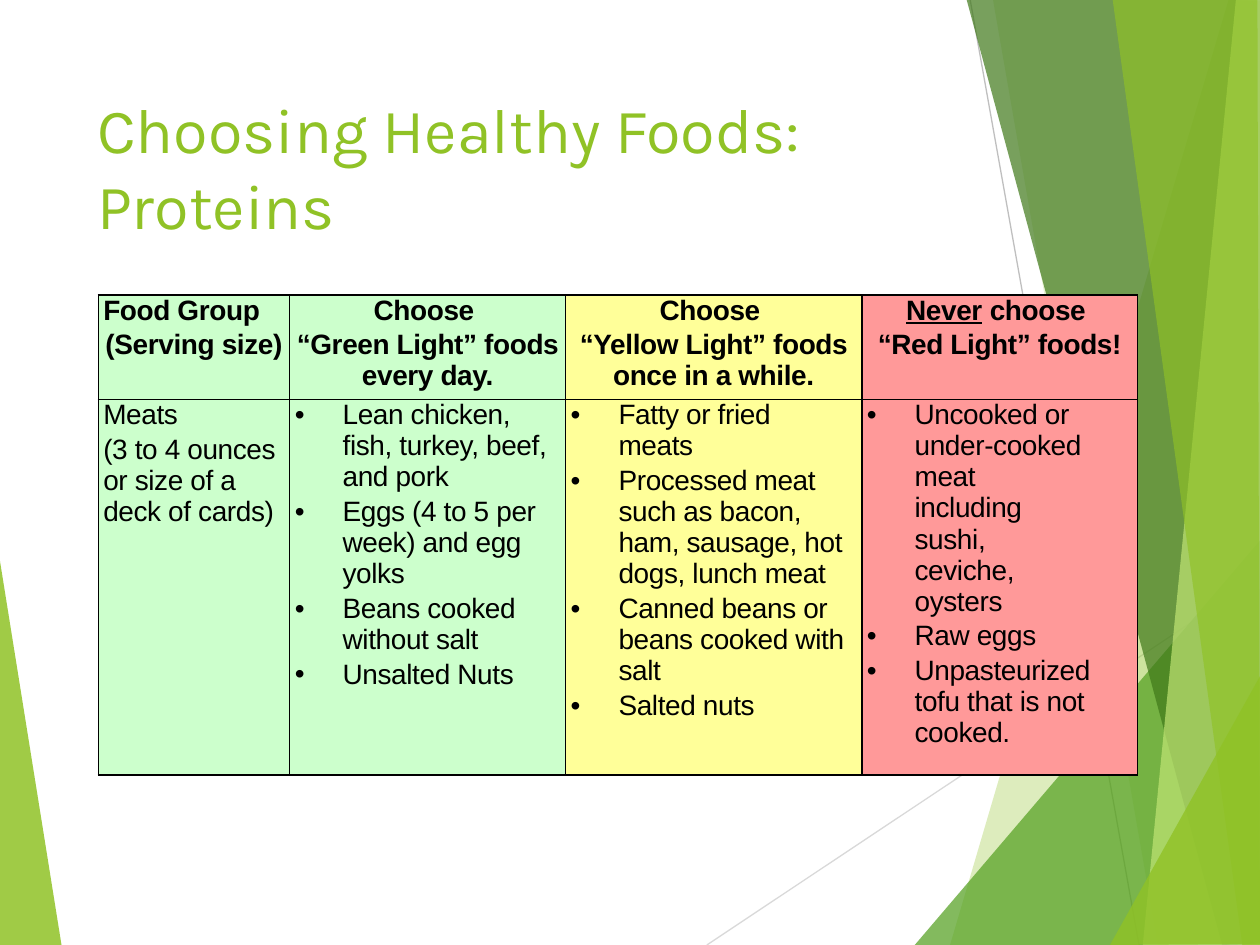
from dataclasses import dataclass

from lxml import etree
from pptx import Presentation
from pptx.dml.color import RGBColor
from pptx.enum.shapes import MSO_CONNECTOR
from pptx.enum.text import MSO_ANCHOR, PP_ALIGN
from pptx.oxml.ns import qn
from pptx.util import Inches, Pt

STRAIGHT = MSO_CONNECTOR.STRAIGHT
TOP = MSO_ANCHOR.TOP
LEFT, CENTER, JUSTIFY = PP_ALIGN.LEFT, PP_ALIGN.CENTER, PP_ALIGN.JUSTIFY

LIME, GREEN, YELLOW, RED, BLACK = "90C226", "CCFFCC", "FFFF99", "FF9999", "000000"
COLUMN_WIDTHS = (1.52, 2.19, 2.35, 2.19)
ROW_HEIGHTS = (0.83, 2.98)
COLUMN_FILLS = (GREEN, GREEN, YELLOW, RED)
CELL_FORMAT = {
    "margin_left": Inches(0.04),
    "margin_right": Inches(0.04),
    "margin_top": 0,
    "margin_bottom": 0,
    "vertical_anchor": TOP,
}
TITLE_FORMAT = {
    "left": Inches(0.67),
    "top": Inches(0.67),
    "width": Inches(6.94),
    "height": Inches(1.44),
}


@dataclass
class Facet:
    points: tuple[tuple[float, float], ...]
    color: str
    opacity: int


@dataclass
class Ray:
    start: tuple[float, float]
    end: tuple[float, float]
    color: str


@dataclass
class Entry:
    text: str
    underlined: str = ""
    bold: bool = False
    bullet: bool = False
    alignment: PP_ALIGN = LEFT
    space_after: int = 0
    right_indent: float = 0


def heading(text: str, underlined: str = "", alignment: PP_ALIGN = CENTER) -> Entry:
    return Entry(text, underlined, bold=True, alignment=alignment)


def item(text: str, alignment: PP_ALIGN = LEFT, space_after: int = 0,
         right_indent: float = 0.08) -> Entry:
    return Entry(text, bullet=True, alignment=alignment,
                 space_after=space_after, right_indent=right_indent)


LEFT_FACET = Facet(((-0.01, 4.39), (0.49, 7.51), (-0.01, 7.5)), LIME, 85)
RAYS = (
    Ray((5.61, 7.5), (10.01, 4.57), "D9D9D9"),
    Ray((7.7, 0), (9.04, 7.5), "BFBFBF"),
)
RIGHT_FACETS = (
    Facet(((9.75, 0), (7.54, 7.5), (10.02, 7.51), (10.01, 0.01)), LIME, 30),
    Facet(((7.88, -0.01), (9.19, 7.5), (10.01, 7.5), (10.01, -0.01)), LIME, 20),
    Facet(((7.26, 7.5), (10, 4.29), (10.01, 7.5)), "54A021", 72),
    Facet(((7.67, -0.01), (9.7, 7.5), (10.01, 7.49), (10.01, -0.01)), "3F7819", 70),
    Facet(((9.81, -0.01), (9.07, 7.5), (10.01, 7.5), (10, -0.01)), "C0E474", 70),
    Facet(((8.83, -0.01), (9.86, 7.5), (10, 7.5), (9.98, -0.01)), LIME, 65),
    Facet(((8.81, 7.5), (10.01, 5.35), (10.01, 7.49)), LIME, 80),
)
FOOD_ROWS = (
    (
        (heading("Food Group", alignment=JUSTIFY), heading("(Serving size)")),
        (heading("Choose "), heading("“Green Light” foods every day.")),
        (heading("Choose "), heading("“Yellow Light” foods once in a while.")),
        (heading(" choose ", "Never"), heading("“Red Light” foods!")),
    ),
    (
        (Entry("Meats"), Entry("(3 to 4 ounces or size of a deck of cards)")),
        (
            item("Lean chicken, fish, turkey, beef, and pork"),
            item("Eggs (4 to 5 per week) and egg yolks"),
            item("Beans cooked without salt"),
            item("Unsalted Nuts", space_after=12),
        ),
        (
            item("Fatty or fried meats"),
            item("Processed meat such as bacon, ham, sausage, hot dogs, lunch meat"),
            item("Canned beans or beans cooked with salt"),
            item("Salted nuts"),
        ),
        (
            item("Uncooked or under-cooked meat including sushi, ceviche, oysters",
                 right_indent=0.38),
            item("Raw eggs", JUSTIFY),
            item("Unpasteurized tofu that is not cooked."),
        ),
    ),
)


def apply_format(target, values: dict) -> None:
    for name, value in values.items():
        setattr(target, name, value)


def set_color(color_owner, color: str) -> None:
    color_owner.solid()
    color_owner.fore_color.rgb = RGBColor.from_string(color)


def draw_facet(slide, facet: Facet) -> None:
    points = [(Inches(x), Inches(y)) for x, y in facet.points]
    builder = slide.shapes.build_freeform(*points[0])
    builder.add_line_segments(points[1:], close=True)
    shape = builder.convert_to_shape()
    shape.shadow.inherit = False
    shape.line.fill.background()
    set_color(shape.fill, facet.color)
    color_element = shape.element.spPr.find(qn("a:solidFill"))[0]
    etree.SubElement(color_element, qn("a:alpha"), val=str(facet.opacity * 1000))


def draw_ray(slide, ray: Ray) -> None:
    ends = [Inches(value) for value in ray.start + ray.end]
    connector = slide.shapes.add_connector(STRAIGHT, *ends)
    connector.line.width = Pt(0.75)
    set_color(connector.line.fill, ray.color)
    etree.SubElement(connector.element.spPr, qn("a:effectLst"))


def add_run(paragraph, text: str, bold: bool, underline: bool) -> None:
    run = paragraph.add_run()
    run.text = text
    apply_format(run.font, {"name": "Arial", "size": Pt(16), "bold": bold,
                            "underline": underline})
    set_color(run.font.fill, BLACK)
    run.font._element.set("spc", "-20")


def write_entry(paragraph, entry: Entry) -> None:
    apply_format(paragraph, {"alignment": entry.alignment, "space_before": Pt(2),
                             "space_after": Pt(entry.space_after)})
    if entry.underlined:
        add_run(paragraph, entry.underlined, entry.bold, True)
    add_run(paragraph, entry.text, entry.bold, False)
    if entry.bullet:
        properties = paragraph._p.get_or_add_pPr()
        indents = {"marL": 0.38, "marR": entry.right_indent, "indent": -0.38}
        for name, value in indents.items():
            properties.set(name, str(Inches(value)))
        etree.SubElement(properties, qn("a:buFont"), typeface="Arial")
        etree.SubElement(properties, qn("a:buChar"), char="•")


def add_borders(cell) -> None:
    properties = cell._tc.get_or_add_tcPr()
    for position, side in enumerate(("lnL", "lnR", "lnT", "lnB")):
        border = etree.Element(qn(f"a:{side}"), w=str(Pt(1)))
        fill = etree.SubElement(border, qn("a:solidFill"))
        etree.SubElement(fill, qn("a:srgbClr"), val=BLACK)
        properties.insert(position, border)


def write_cell(cell, entries: tuple[Entry, ...], color: str) -> None:
    apply_format(cell, CELL_FORMAT)
    set_color(cell.fill, color)
    add_borders(cell)
    frame = cell.text_frame
    for index, entry in enumerate(entries):
        write_entry(frame.add_paragraph() if index else frame.paragraphs[0], entry)


def draw_food_table(slide) -> None:
    table = slide.shapes.add_table(
        len(ROW_HEIGHTS), len(COLUMN_WIDTHS), Inches(0.78), Inches(2.34),
        Inches(sum(COLUMN_WIDTHS)), Inches(sum(ROW_HEIGHTS))).table
    apply_format(table, {"first_row": False, "horz_banding": False})
    for column, width in zip(table.columns, COLUMN_WIDTHS):
        column.width = Inches(width)
    for row, height, contents in zip(table.rows, ROW_HEIGHTS, FOOD_ROWS):
        row.height = Inches(height)
        for cell, entries, color in zip(row.cells, contents, COLUMN_FILLS):
            write_cell(cell, entries, color)


def write_title(slide) -> None:
    title = slide.shapes.title
    apply_format(title, TITLE_FORMAT)
    apply_format(title.text_frame, {"word_wrap": True, "vertical_anchor": TOP})
    paragraph = title.text_frame.paragraphs[0]
    paragraph.alignment = LEFT
    paragraph.add_run().text = "Choosing Healthy Foods:"
    paragraph.add_line_break()
    paragraph.add_run().text = "Proteins"
    for run in paragraph.runs:
        apply_format(run.font, {"name": "Karla", "size": Pt(36)})
        set_color(run.font.fill, LIME)
    title.element.getparent().append(title.element)


def main() -> None:
    presentation = Presentation()
    apply_format(presentation, {"slide_width": Inches(10), "slide_height": Inches(7.5)})
    slide = presentation.slides.add_slide(presentation.slide_layouts[5])
    draw_facet(slide, LEFT_FACET)
    for ray in RAYS:
        draw_ray(slide, ray)
    for facet in RIGHT_FACETS:
        draw_facet(slide, facet)
    write_title(slide)
    draw_food_table(slide)
    presentation.save("out.pptx")


if __name__ == "__main__":
    main()
